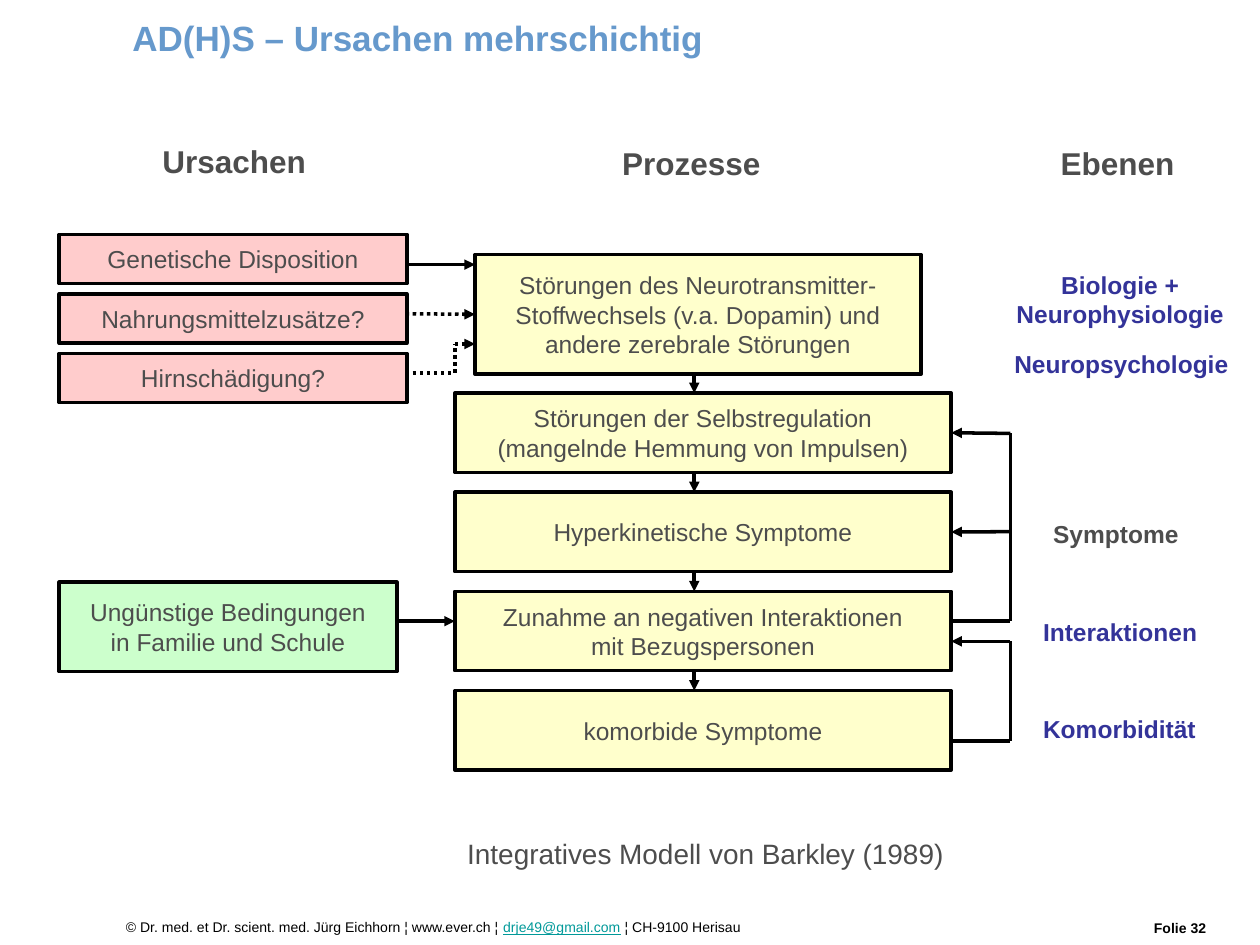
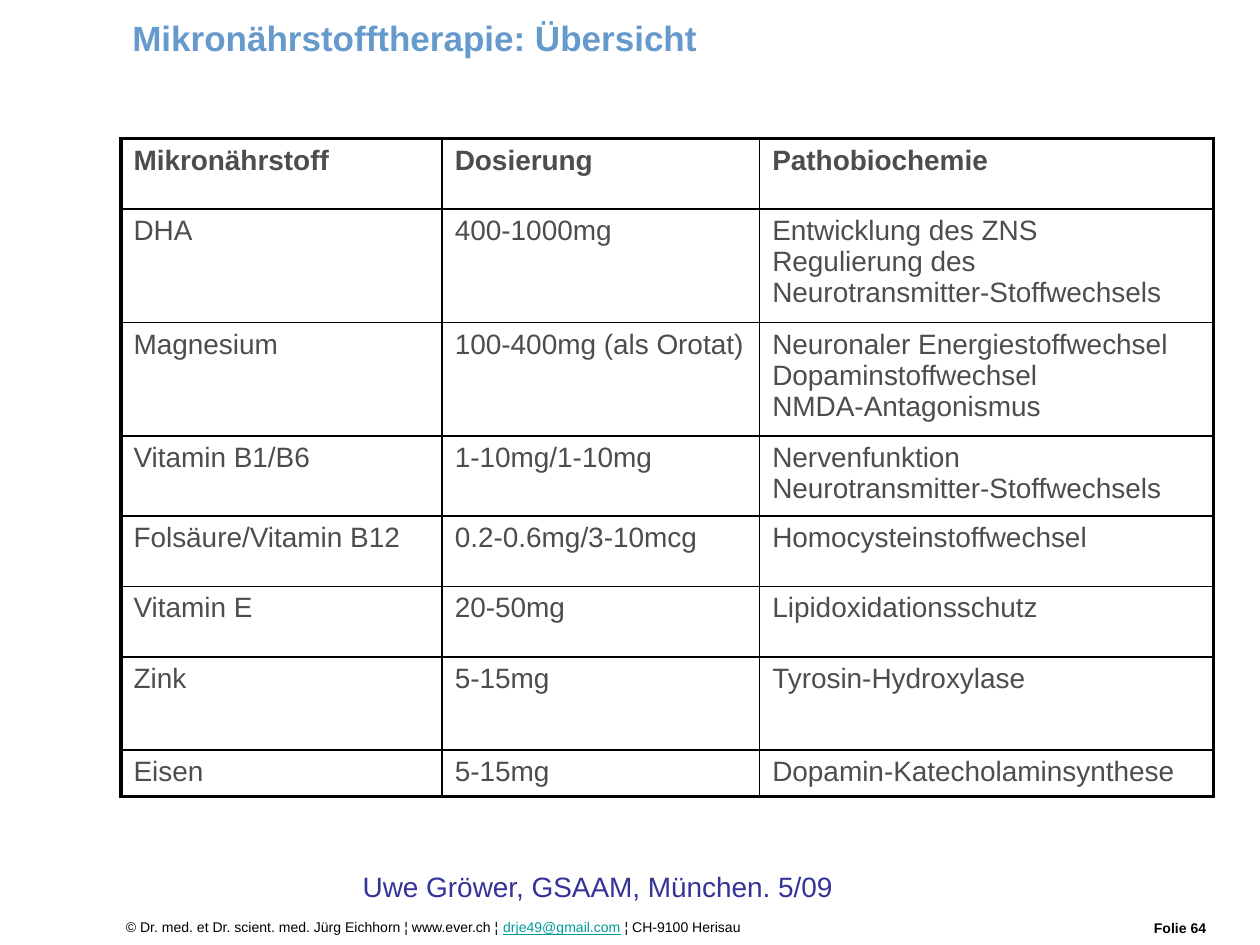
from lxml import etree
from pptx import Presentation
from pptx.dml.color import RGBColor
from pptx.enum.dml import MSO_LINE
from pptx.enum.shapes import MSO_CONNECTOR, MSO_SHAPE
from pptx.enum.text import MSO_ANCHOR, PP_ALIGN
from pptx.oxml.ns import qn
from pptx.util import Inches, Pt

BLACK = RGBColor(0x00, 0x00, 0x00)
GREY = RGBColor(0x4D, 0x4D, 0x4D)
BLUE = RGBColor(0x66, 0x99, 0xCC)
NAVY = RGBColor(0x33, 0x33, 0x99)
TEAL = RGBColor(0x00, 0x99, 0x99)
PINK = RGBColor(0xFF, 0xCC, 0xCC)
CREAM = RGBColor(0xFF, 0xFF, 0xCC)
GREEN = RGBColor(0xCC, 0xFF, 0xCC)
LEFT, CENTER = PP_ALIGN.LEFT, PP_ALIGN.CENTER
MIDDLE = MSO_ANCHOR.MIDDLE
STRAIGHT, RECT, DOT = MSO_CONNECTOR.STRAIGHT, MSO_SHAPE.RECTANGLE, MSO_LINE.ROUND_DOT


def style(frame, size, color, bold=False, align=LEFT):
    form = {"name": "Arial", "size": Pt(size), "bold": bold}
    for para in frame.paragraphs:
        para.alignment = align
        for run in para.runs:
            for key, value in form.items():
                setattr(run.font, key, value)
            run.font.color.rgb = color


def label(slide, text, place, size, color, bold=False, align=LEFT, wrap=True):
    frame = slide.shapes.add_textbox(*map(Inches, place)).text_frame
    frame.word_wrap = wrap
    frame.text = text
    style(frame, size, color, bold, align)
    return frame


prs = Presentation()
prs.slide_width, prs.slide_height = Inches(10), Inches(7.5)

# Title and footer of both slides
slides = []
for head, page in (("AD(H)S – Ursachen mehrschichtig", 32),
                   ("Mikronährstofftherapie: Übersicht", 64)):
    slide = prs.slides.add_slide(prs.slide_layouts[5])
    slides.append(slide)
    title = slide.shapes.title
    title.left, title.top = Inches(0.95), Inches(0.05)
    title.width, title.height = Inches(6.42), Inches(0.5)
    title.text = head
    title.text_frame.vertical_anchor = MIDDLE
    style(title.text_frame, 20, BLUE, True)
    label(slide, f"Folie {page}", (9.06, 7.25, 0.94, 0.23), 8, BLACK, True)
    foot = label(slide, "© Dr. med. et Dr. scient. med. Jürg Eichhorn ¦ www.ever.ch ¦ ",
                 (0.9, 7.24, 8.11, 0.23), 8, BLACK)
    mail, town = [foot.paragraphs[0].add_run() for _ in range(2)]
    mail.text, town.text = "drje49@gmail.com", " ¦ CH-9100 Herisau"
    style(foot, 8, BLACK)
    mail.font.color.rgb, mail.font.underline = TEAL, True

model, survey = slides

# Column heads
for text, x, y, width in (("Ursachen", 1.19, 1.08, 1.34),
                          ("Prozesse", 4.84, 1.09, 1.3),
                          ("Ebenen", 8.32, 1.09, 1.1)):
    label(model, text, (x, y, width, 0.4), 18, GREY, True, wrap=False)

# Boxes: causes on the left, processes in the middle
boxes = [("Störungen des Neurotransmitter-\nStoffwechsels (v.a. Dopamin) und\n"
          "andere zerebrale Störungen", (3.77, 2.02, 3.54, 0.95), CREAM),
         ("Ungünstige Bedingungen\nin Familie und Schule",
          (0.47, 4.62, 2.68, 0.71), GREEN)]
causes = ("Genetische Disposition", "Nahrungsmittelzusätze?", "Hirnschädigung?")
for i, text in enumerate(causes):
    boxes.append((text, (0.47, 1.86 + 0.473 * i, 2.76, 0.39), PINK))
steps = ("Störungen der Selbstregulation\n(mangelnde Hemmung von Impulsen)",
         "Hyperkinetische Symptome",
         "Zunahme an negativen Interaktionen\nmit Bezugspersonen",
         "komorbide Symptome")
for i, text in enumerate(steps):
    boxes.append((text, (3.61, 3.12 + 0.787 * i, 3.94, 0.63), CREAM))

shapes = {}
for text, place, fill in boxes:
    box = model.shapes.add_shape(RECT, *map(Inches, place))
    shapes[text] = box
    box.shadow.inherit = False
    box.fill.solid()
    box.fill.fore_color.rgb = fill
    box.line.color.rgb, box.line.width = BLACK, Pt(2)
    frame = box.text_frame
    frame.text = text
    frame.word_wrap, frame.vertical_anchor = False, MIDDLE
    style(frame, 14, GREY, align=CENTER)

# Paths: points, dotted or not, and the box side where the arrow ends
neuro, control, hyper = shapes[boxes[0][0]], shapes[steps[0]], shapes[steps[1]]
paths = [([(3.22, 2.1), (3.77, 2.1)], False, None),
         ([(3.22, 2.49), (3.77, 2.49)], True, (neuro, 1)),
         ([(3.22, 2.96), (3.61, 2.96), (3.61, 2.73), (3.77, 2.73)], True, None),
         ([(3.14, 4.93), (3.61, 4.93)], False, None),
         ([(7.55, 5.88), (8.02, 5.88), (8.02, 5.09), (7.55, 5.09)], False, None),
         ([(7.55, 4.93), (8.02, 4.93), (8.02, 4.22), (7.55, 4.22)], False, (hyper, 3)),
         ([(8.02, 4.22), (8.02, 3.44), (7.55, 3.44)], False, (control, 3))]
for i in range(4):
    y = 2.96 + 0.787 * i
    paths.append(([(5.51, y), (5.51, y + 0.16)], False, None))

for points, dotted, goal in paths:
    for start, end in zip(points, points[1:]):
        line = model.shapes.add_connector(STRAIGHT, *map(Inches, start + end))
        line.line.color.rgb, line.line.width = BLACK, Pt(2)
        if dotted:
            line.line.dash_style = DOT
        props = line._element.spPr
        etree.SubElement(props, qn("a:effectLst"))
    # Arrowhead on the last piece
    etree.SubElement(props.find(qn("a:ln")), qn("a:tailEnd"), type="triangle")
    if goal:
        line.end_connect(*goal)

# Levels on the right
for text, place, color, align in (
        ("Biologie +\nNeurophysiologie", (7.82, 2.09, 2.14, 0.57), NAVY, CENTER),
        ("Neuropsychologie", (7.74, 2.72, 2.32, 0.33), NAVY, CENTER),
        ("Symptome", (8.26, 4.07, 1.58, 0.33), GREY, LEFT),
        ("Interaktionen", (8.18, 4.85, 1.73, 0.33), NAVY, LEFT),
        ("Komorbidität", (8.18, 5.62, 1.73, 0.33), NAVY, LEFT)):
    label(model, text, place, 14, color, True, align)

# Source lines of both slides
label(model, "Integratives Modell von Barkley (1989)",
      (3.61, 6.59, 3.99, 0.37), 16, GREY, wrap=False)
label(survey, "Uwe Gröwer, GSAAM, München. 5/09",
      (2.78, 6.85, 3.95, 0.37), 16, NAVY, wrap=False)

# Nutrient table
rows = (("Mikronährstoff", "Dosierung", "Pathobiochemie"),
        ("DHA", "400-1000mg",
         "Entwicklung des ZNS\vRegulierung des Neurotransmitter-Stoffwechsels"),
        ("Magnesium", "100-400mg (als Orotat)",
         "Neuronaler Energiestoffwechsel\vDopaminstoffwechsel\vNMDA-Antagonismus"),
        ("Vitamin B1/B6", "1-10mg/1-10mg",
         "Nervenfunktion\vNeurotransmitter-Stoffwechsels"),
        ("Folsäure/Vitamin B12", "0.2-0.6mg/3-10mcg", "Homocysteinstoffwechsel"),
        ("Vitamin E", "20-50mg", "Lipidoxidationsschutz"),
        ("Zink", "5-15mg", "Tyrosin-Hydroxylase"),
        ("Eisen", "5-15mg", "Dopamin-Katecholaminsynthese"))
widths = (2.55, 2.52, 3.6)
heights = (0.56, 0.9, 0.9, 0.63, 0.56, 0.56, 0.74, 0.37)
table = survey.shapes.add_table(len(rows), len(widths), Inches(0.96), Inches(1.1),
                                Inches(sum(widths)), Inches(sum(heights))).table
table.first_row = table.horz_banding = False
for col, width in zip(table.columns, widths):
    col.width = Inches(width)
for row, height in zip(table.rows, heights):
    row.height = Inches(height)

for r, texts in enumerate(rows):
    for c, text in enumerate(texts):
        cell = table.cell(r, c)
        cell.text_frame.text = text
        style(cell.text_frame, 16, GREY, r == 0)
        # Thick frame outside, thin rules inside
        outer = {"a:lnL": c == 0, "a:lnR": c == len(widths) - 1,
                 "a:lnT": r == 0, "a:lnB": r == len(rows) - 1}
        props = cell._tc.get_or_add_tcPr()
        for side, thick in outer.items():
            edge = etree.SubElement(props, qn(side), w=str(Pt(2.25 if thick else 1)))
            fill = etree.SubElement(edge, qn("a:solidFill"))
            etree.SubElement(fill, qn("a:srgbClr"), val=str(BLACK))
        cell.fill.background()

prs.save("out.pptx")
